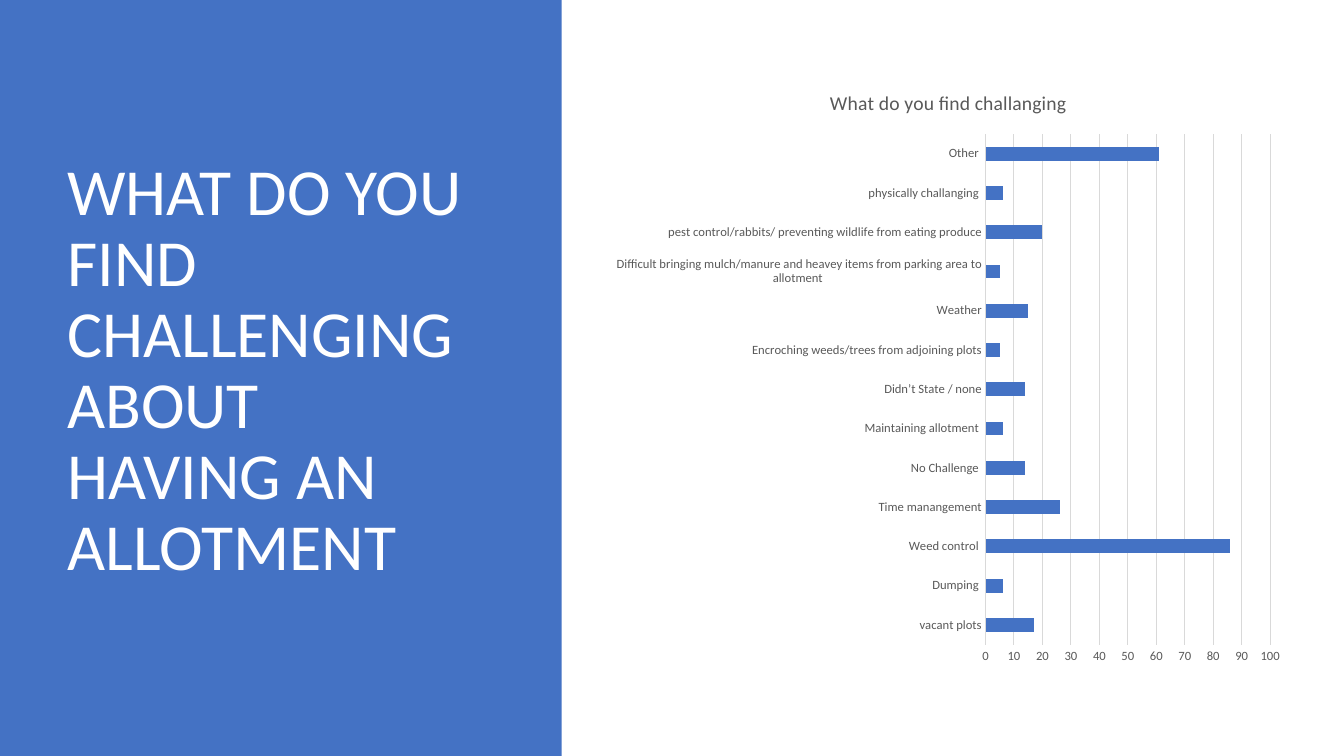
from pptx import Presentation
from pptx.chart.data import CategoryChartData
from pptx.dml.color import RGBColor
from pptx.enum.chart import XL_CHART_TYPE, XL_TICK_MARK
from pptx.enum.shapes import MSO_SHAPE
from pptx.enum.text import MSO_ANCHOR
from pptx.util import Inches, Pt

HEADING = "WHAT DO YOU FIND CHALLENGING ABOUT HAVING AN ALLOTMENT"
CHART_TITLE = "What do you find challanging"
CHALLENGES = [
    ("vacant plots", 17),
    ("Dumping ", 6),
    ("Weed control ", 86),
    ("Time manangement", 26),
    ("No Challenge ", 14),
    ("Maintaining allotment ", 6),
    ("Didn’t State / none", 14),
    ("Encroching weeds/trees from adjoining plots", 5),
    ("Weather", 15),
    ("Difficult bringing mulch/manure and heavey items from parking area to allotment ", 5),
    ("pest control/rabbits/ preventing wildlife from eating produce", 20),
    ("physically challanging ", 6),
    ("Other ", 61),
]

FONT = "Calibri"
BLUE = RGBColor(0x44, 0x72, 0xC4)
WHITE = RGBColor(0xFF, 0xFF, 0xFF)
GREY = RGBColor(0x59, 0x59, 0x59)
LIGHT_GREY = RGBColor(0xD9, 0xD9, 0xD9)

WIDTH, HEIGHT = Inches(13.33), Inches(7.5)
PANEL_WIDTH = Inches(5.57)
MARGIN_TOP = Inches(0.68)
CONTENT_HEIGHT = Inches(6.02)
HEADING_LEFT, HEADING_WIDTH = Inches(0.57), Inches(4.16)
CHART_LEFT, CHART_WIDTH = Inches(5.98), Inches(6.85)


def style_font(font, size, color):
    font.name = FONT
    font.size = Pt(size)
    font.bold = False
    font.color.rgb = color


def style_line(line):
    line.color.rgb = LIGHT_GREY
    line.width = Pt(0.75)


def add_panel(slide):
    panel = slide.shapes.add_shape(MSO_SHAPE.RECTANGLE, 0, 0, PANEL_WIDTH, HEIGHT)
    panel.shadow.inherit = False
    panel.fill.solid()
    panel.fill.fore_color.rgb = BLUE
    panel.line.fill.background()


def add_heading(slide):
    box = slide.shapes.add_textbox(HEADING_LEFT, MARGIN_TOP, HEADING_WIDTH, CONTENT_HEIGHT)
    frame = box.text_frame
    frame.word_wrap = True
    frame.vertical_anchor = MSO_ANCHOR.MIDDLE
    frame.text = HEADING
    paragraph = frame.paragraphs[0]
    paragraph.line_spacing = 0.9
    style_font(paragraph.runs[0].font, 47, WHITE)


def add_challenge_chart(slide):
    names, counts = zip(*CHALLENGES)
    data = CategoryChartData()
    data.categories = names
    data.add_series("Series 1", counts)
    chart = slide.shapes.add_chart(
        XL_CHART_TYPE.BAR_CLUSTERED, CHART_LEFT, MARGIN_TOP, CHART_WIDTH, CONTENT_HEIGHT, data
    ).chart
    style_font(chart.font, 10, GREY)
    chart.has_legend = False
    chart.has_title = True
    title = chart.chart_title
    title.text_frame.text = CHART_TITLE
    style_font(title.text_frame.paragraphs[0].runs[0].font, 14, GREY)
    title.include_in_layout = False

    for axis in (chart.category_axis, chart.value_axis):
        axis.major_tick_mark = axis.minor_tick_mark = XL_TICK_MARK.NONE
        style_font(axis.tick_labels.font, 9, GREY)
    style_line(chart.category_axis.format.line)
    chart.value_axis.format.line.fill.background()
    style_line(chart.value_axis.major_gridlines.format.line)
    chart.value_axis.minimum_scale = 0
    chart.value_axis.maximum_scale = 100
    chart.value_axis.major_unit = 10

    plot = chart.plots[0]
    plot.gap_width = 182
    plot.vary_by_categories = False
    fill = plot.series[0].format.fill
    fill.solid()
    fill.fore_color.rgb = BLUE


def main():
    presentation = Presentation()
    presentation.slide_width, presentation.slide_height = WIDTH, HEIGHT
    slide = presentation.slides.add_slide(presentation.slide_layouts[6])
    add_panel(slide)
    add_heading(slide)
    add_challenge_chart(slide)
    presentation.save("out.pptx")


if __name__ == "__main__":
    main()
